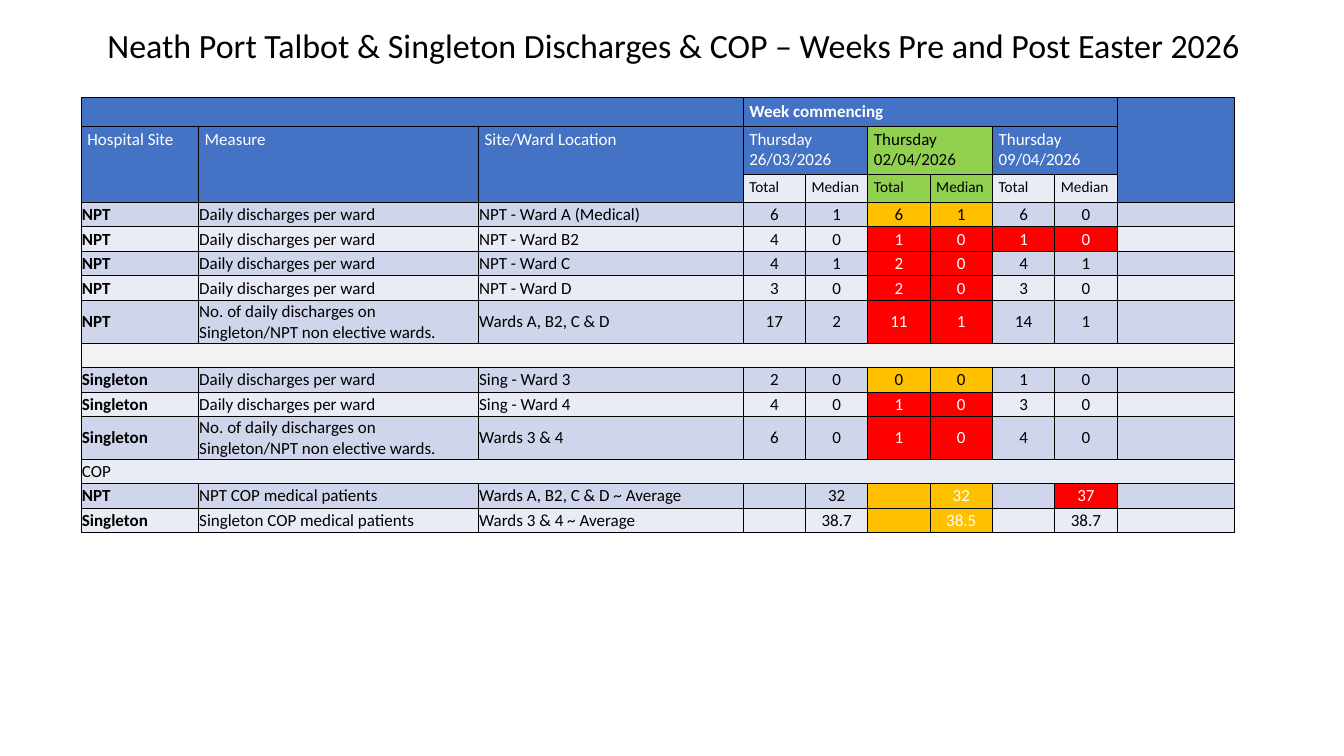
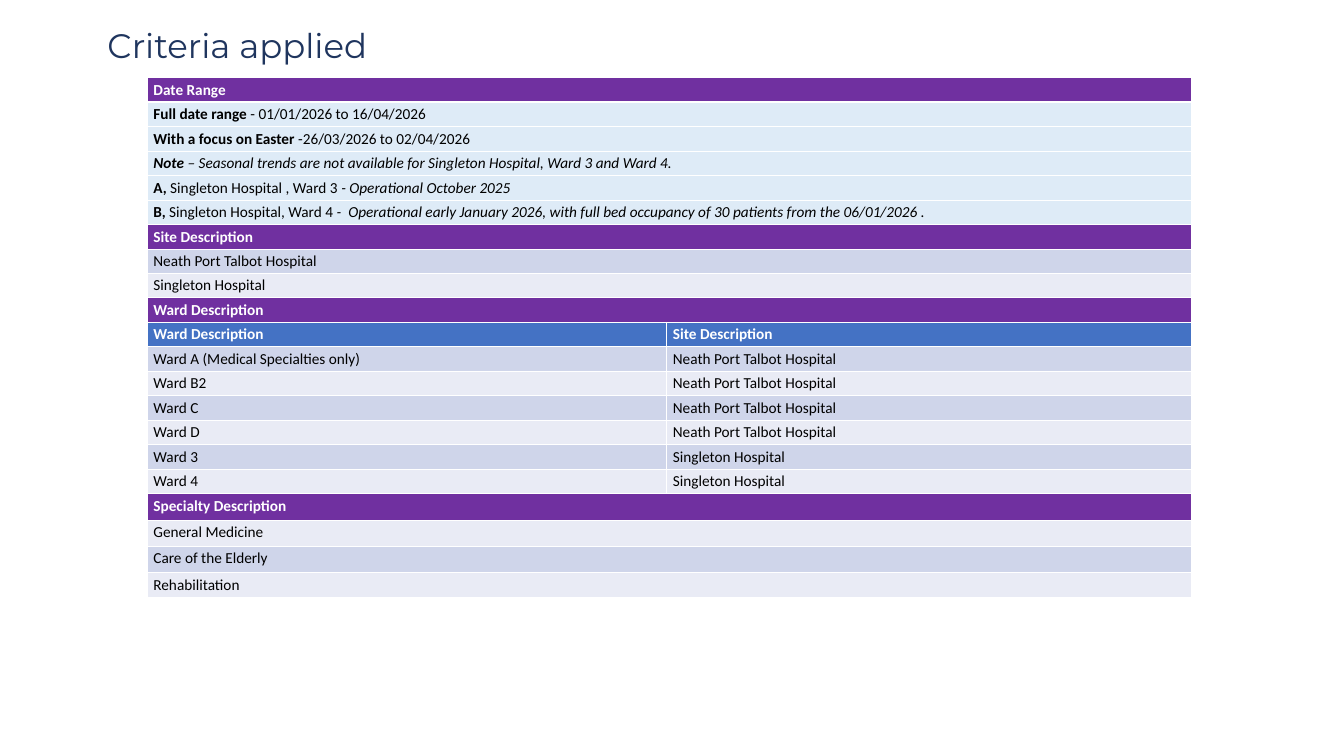
from lxml import etree
from pptx import Presentation
from pptx.dml.color import RGBColor
from pptx.enum.text import MSO_ANCHOR, PP_ALIGN
from pptx.oxml.ns import qn
from pptx.util import Inches, Pt

CENTER, LEFT = PP_ALIGN.CENTER, PP_ALIGN.LEFT
MIDDLE = MSO_ANCHOR.MIDDLE

BODY_FONT = "Calibri"
BLACK, WHITE = "000000", "FFFFFF"
BLUE, GREEN, PURPLE = "4472C4", "92D050", "7030A0"
PALE_BLUE, PALE_GREY = "DEEBF7", "F2F2F2"
BAND_DARK, BAND_LIGHT = "CFD5EA", "E9EBF5"
AMBER, RED = "FFC000", "FF0000"

# Status letter: fill and text colour; "-" keeps the row's band
STATUS = {"a": (AMBER, BLACK), "A": (AMBER, WHITE), "R": (RED, WHITE)}

WARD_MEASURE = "Daily discharges per ward"
SITE_MEASURE = "No. of daily discharges on Singleton/NPT non elective wards."
NPT_NAME, SINGLETON_NAME = "Neath Port Talbot Hospital", "Singleton Hospital"

WEEKS = [
    ("Thursday 26/03/2026", BLUE, WHITE, BAND_LIGHT),
    ("Thursday 02/04/2026", GREEN, BLACK, GREEN),
    ("Thursday 09/04/2026", BLUE, WHITE, BAND_LIGHT),
]

# Site, measure, location, total and median of each week, statuses.
# A row of one text runs across the whole table.
DISCHARGES = [
    ("NPT", WARD_MEASURE, "NPT - Ward A (Medical)", (6, 1, 6, 1, 6, 0), "--aa--"),
    ("NPT", WARD_MEASURE, "NPT - Ward B2", (4, 0, 1, 0, 1, 0), "--RRRR"),
    ("NPT", WARD_MEASURE, "NPT - Ward C", (4, 1, 2, 0, 4, 1), "--RR--"),
    ("NPT", WARD_MEASURE, "NPT - Ward D", (3, 0, 2, 0, 3, 0), "--RR--"),
    ("NPT", SITE_MEASURE, "Wards A, B2, C & D", (17, 2, 11, 1, 14, 1), "--RR--"),
    ("",),
    ("Singleton", WARD_MEASURE, "Sing - Ward 3", (2, 0, 0, 0, 1, 0), "--aa--"),
    ("Singleton", WARD_MEASURE, "Sing - Ward 4", (4, 0, 1, 0, 3, 0), "--RR--"),
    ("Singleton", SITE_MEASURE, "Wards 3 & 4", (6, 0, 1, 0, 4, 0), "--RR--"),
    ("COP",),
    ("NPT", "NPT COP medical patients", "Wards A, B2, C & D ~ Average",
     ("", 32, "", 32, "", 37), "--AA-R"),
    ("Singleton", "Singleton COP medical patients", "Wards 3 & 4 ~ Average",
     ("", 38.7, "", 38.5, "", 38.7), "--AA--"),
]

# Kind of row, then its cells; a cell is a list of (text, style) runs,
# where the style holds "b" for bold and "i" for italic
CRITERIA = [
    ("section", "Date Range"),
    ("note", [("Full date range ", "b"), ("- 01/01/2026 to 16/04/2026", "")]),
    ("note", [("With a focus on Easter ", "b"), ("-26/03/2026 to 02/04/2026", "")]),
    ("note", [("Note ", "bi"),
              ("– Seasonal trends are not available for Singleton Hospital, "
               "Ward 3 and Ward 4.", "i")]),
    ("note", [("A, ", "b"), ("Singleton Hospital , Ward 3 ", ""),
              ("- Operational October 2025", "i")]),
    ("note", [("B, ", "b"), ("Singleton Hospital, Ward 4 ", ""),
              ("-  Operational early January 2026, with full bed occupancy "
               "of 30 patients from the 06/01/2026 .", "i")]),
    ("section", "Site Description"),
    ("band", NPT_NAME),
    ("band", SINGLETON_NAME),
    ("section", "Ward Description"),
    ("header", "Ward Description", "Site Description"),
    ("band", "Ward A (Medical Specialties only)", NPT_NAME),
    ("band", "Ward B2", NPT_NAME),
    ("band", "Ward C", NPT_NAME),
    ("band", "Ward D", NPT_NAME),
    ("band", "Ward 3", SINGLETON_NAME),
    ("band", "Ward 4", SINGLETON_NAME),
    ("section", "Specialty Description"),
    ("band", "General Medicine"),
    ("band", "Care of the Elderly"),
    ("band", "Rehabilitation"),
]


def rgb(value):
    return RGBColor.from_string(value)


def band_fill(row):
    return BAND_DARK if row % 2 else BAND_LIGHT


def add_span(para, text, size, color, style="", font=BODY_FONT):
    span = para.add_run()
    span.text = text
    span.font.name = font
    span.font.size = Pt(size)
    span.font.color.rgb = rgb(color)
    span.font.bold = "b" in style
    span.font.italic = "i" in style


def add_page(deck, title, font, color):
    """Add a blank page with the shared title style."""
    page = deck.slides.add_slide(deck.slide_layouts[6])
    box = page.shapes.add_textbox(Inches(1.66), Inches(0.43), Inches(19.25), Inches(0.61))
    box.text_frame.word_wrap = True
    para = box.text_frame.paragraphs[0]
    para.line_spacing = 0.9
    add_span(para, title, 40, color, font=font)
    return page


def set_border(cell, side, color, width):
    line = etree.SubElement(cell._tc.get_or_add_tcPr(), qn(f"a:ln{side}"), w=str(Pt(width)))
    fill = etree.SubElement(line, qn("a:solidFill"))
    etree.SubElement(fill, qn("a:srgbClr"), val=color)


def add_grid(page, left, top, widths, heights, border, first_row_rule=1):
    """Add a plain table with 1 pt borders all round each cell."""
    frame = page.shapes.add_table(len(heights), len(widths), Inches(left), Inches(top),
                                  Inches(sum(widths)), Inches(sum(heights)))
    table = frame.table
    table.first_row = table.horz_banding = False
    for column, width in zip(table.columns, widths):
        column.width = Inches(width)
    for index, (row, height) in enumerate(zip(table.rows, heights)):
        row.height = Inches(height)
        for cell in row.cells:
            for side in "LRTB":
                thick = index == 0 and side == "B"
                set_border(cell, side, border, first_row_rule if thick else 1)
    return table


def fill_cell(table, row, column, fill, spans=(), color=BLACK, size=20,
              rows=1, columns=1, align=LEFT, tight=False):
    """Colour a cell, merged over rows and columns, and write its runs."""
    for r in range(row, row + rows):
        for c in range(column, column + columns):
            part = table.cell(r, c)
            part.fill.solid()
            part.fill.fore_color.rgb = rgb(fill)
    cell = table.cell(row, column)
    if rows * columns > 1:
        cell.merge(table.cell(row + rows - 1, column + columns - 1))
    if not spans:
        return
    if tight:
        cell.vertical_anchor = MIDDLE
        cell.margin_left = cell.margin_right = cell.margin_top = Inches(0.01)
        cell.margin_bottom = 0
    para = cell.text_frame.paragraphs[0]
    para.alignment = align
    for text, style in spans:
        add_span(para, text, size, color, style)


def plain(value, style=""):
    """Return the runs of a cell with a single style, or none if it is empty."""
    return [(str(value), style)] if value != "" else []


def add_discharge_header(table):
    fill_cell(table, 0, 0, BLUE, columns=3)
    fill_cell(table, 0, 3, BLUE, plain("Week commencing", "b"), WHITE, columns=6)
    fill_cell(table, 0, 9, BLUE, rows=3)
    for column, text in enumerate(("Hospital Site", "Measure", "Site/Ward Location")):
        fill_cell(table, 1, column, BLUE, plain(text), WHITE, rows=2)
    for week, (text, fill, color, sub_fill) in enumerate(WEEKS):
        column = 3 + 2 * week
        fill_cell(table, 1, column, fill, plain(text), color, columns=2)
        for offset, label in enumerate(("Total", "Median")):
            fill_cell(table, 2, column + offset, sub_fill, plain(label), size=18)


def add_discharge_row(table, row, record):
    band = band_fill(row)
    if len(record) == 1:
        fill = band if record[0] else PALE_GREY
        fill_cell(table, row, 0, fill, plain(record[0]), columns=10, tight=True)
        return
    site, measure, location, values, statuses = record
    for column, (text, style) in enumerate(((site, "b"), (measure, ""), (location, ""))):
        fill_cell(table, row, column, band, plain(text, style), tight=True)
    for column, (value, status) in enumerate(zip(values, statuses), 3):
        fill, color = STATUS.get(status, (band, BLACK))
        fill_cell(table, row, column, fill, plain(value), color, align=CENTER, tight=True)
    fill_cell(table, row, 9, band)


def add_discharges_page(deck):
    page = add_page(deck, "Neath Port Talbot & Singleton Discharges & COP – "
                          "Weeks Pre and Post Easter 2026", BODY_FONT, BLACK)
    widths = [1.92, 4.58, 4.33] + [1.02] * 6 + [1.92]
    heights = [0.46, 0.8, 0.45]
    heights += [0.7 if SITE_MEASURE in record else 0.4 for record in DISCHARGES]
    table = add_grid(page, 1.33, 1.6, widths, heights, BLACK)
    add_discharge_header(table)
    for row, record in enumerate(DISCHARGES, 3):
        add_discharge_row(table, row, record)


def add_criteria_page(deck):
    page = add_page(deck, "Criteria applied", "Montserrat", "1F355E")
    heights = [0.4] * 17 + [0.43] * 3 + [0.4]
    table = add_grid(page, 2.41, 1.27, [8.5, 8.58], heights, WHITE, first_row_rule=3)
    fills = {"section": PURPLE, "header": BLUE, "note": PALE_BLUE}
    for row, (kind, *cells) in enumerate(CRITERIA):
        heading = kind in ("section", "header")
        for column, content in enumerate(cells):
            spans = content if kind == "note" else plain(content, "b" if heading else "")
            fill_cell(table, row, column, fills.get(kind, band_fill(row)), spans,
                      WHITE if heading else BLACK, size=18, columns=3 - len(cells)
                      if len(cells) == 1 else 1)


def main():
    deck = Presentation()
    deck.slide_width, deck.slide_height = Inches(21.99), Inches(12.37)
    add_discharges_page(deck)
    add_criteria_page(deck)
    deck.save("out.pptx")


if __name__ == "__main__":
    main()
